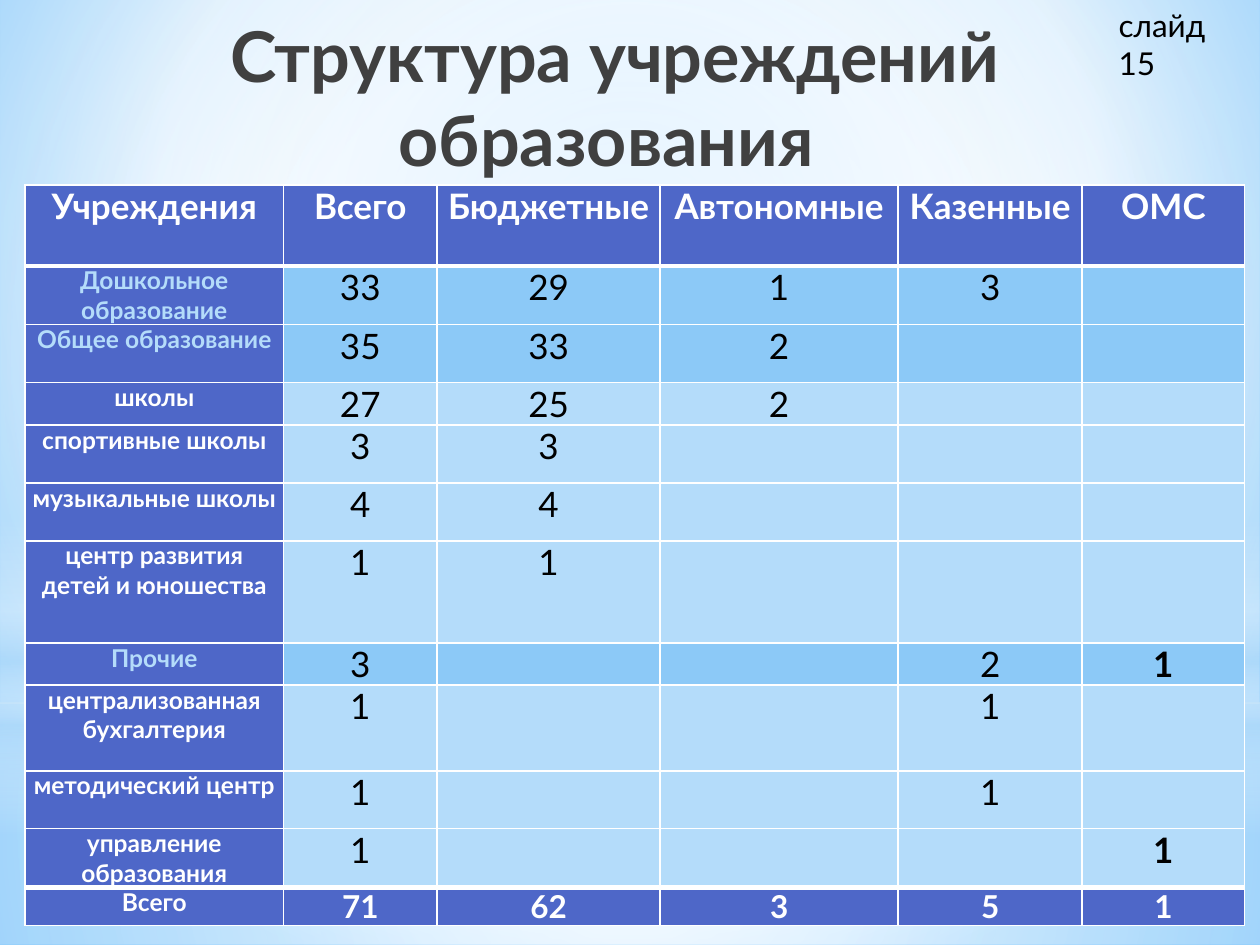
from lxml.etree import SubElement
from pptx import Presentation
from pptx.dml.color import RGBColor
from pptx.enum.shapes import MSO_SHAPE
from pptx.enum.text import MSO_ANCHOR, MSO_AUTO_SIZE, PP_ALIGN
from pptx.oxml import parse_xml
from pptx.oxml.ns import nsdecls, qn
from pptx.util import Inches, Pt

THEME = {
    "font": "Lato",
    "title": "404040",
    "text": "000000",
    "white": "FFFFFF",
    "sky": "B4DCFA",
    "group": "8CC9F7",
    "accent": "4E67C8",
    "glow_edge": "9ED5FF",
    "glow_far": "5BB9FF",
    "title_size": 40,
    "header_size": 20,
    "label_size": 14,
    "value_size": 20,
    "total_size": 18,
    "note_size": 18,
    "thin_line": 1,
    "thick_line": 3,
}
WHITE, SKY = THEME["white"], THEME["sky"]


def write_text(frame, text, size, color, bold=False, align=PP_ALIGN.LEFT):
    paragraph = frame.paragraphs[0]
    paragraph.alignment = align
    run = paragraph.add_run()
    run.text = text
    run.font.name = THEME["font"]
    run.font.size = Pt(size)
    run.font.bold = bold
    run.font.color.rgb = RGBColor.from_string(color)


def paint_gradient(fill, properties, stops, focus=None):
    """Stops are (position, color, opacity) in percent; without a focus it runs downwards."""
    fill.solid()
    gradient = parse_xml(f'<a:gradFill {nsdecls("a")} rotWithShape="1"/>')
    stop_list = SubElement(gradient, qn("a:gsLst"))
    for position, color, opacity in stops:
        stop = SubElement(stop_list, qn("a:gs"), pos=str(position * 1000))
        tint = SubElement(stop, qn("a:srgbClr"), val=color)
        if opacity < 100:
            SubElement(tint, qn("a:alpha"), val=str(opacity * 1000))
    if focus:
        circle = SubElement(gradient, qn("a:path"))
        circle.set("path", "circle")
        sides = {side: str(share * 1000) for side, share in zip("ltrb", focus)}
        SubElement(circle, qn("a:fillToRect"), **sides)
    else:
        SubElement(gradient, qn("a:lin"), ang="5400000", scaled="0")
    properties.replace(properties.find(qn("a:solidFill")), gradient)


presentation = Presentation()
presentation.slide_width = Inches(10)
presentation.slide_height = Inches(7.5)
width, height = presentation.slide_width, presentation.slide_height
slide = presentation.slides.add_slide(presentation.slide_layouts[5])

# Background glow and its soft layers
background = slide.background.fill
background.solid()
paint_gradient(
    background,
    slide.element.cSld.find(qn("p:bg")).find(qn("p:bgPr")),
    [(0, THEME["glow_edge"], 100), (60, WHITE, 100), (100, THEME["glow_far"], 100)],
    focus=(20, 10, 20, 60),
)
center = (50, 50, 50, 50)
horizon = 0.744
layers = [
    (MSO_SHAPE.RECTANGLE, horizon, 1 - horizon, center,
     [(0, WHITE, 91), (37, WHITE, 76), (100, SKY, 79)]),
    (MSO_SHAPE.RECTANGLE, 0, horizon, center,
     [(0, WHITE, 89), (48, WHITE, 62), (100, SKY, 79)]),
    (MSO_SHAPE.RECTANGLE, 0.55, 1 / 3, None,
     [(0, WHITE, 0), (29, WHITE, 30), (45, SKY, 40),
      (55, WHITE, 26), (65, SKY, 60), (100, WHITE, 0)]),
    (MSO_SHAPE.OVAL, 0.233, horizon, center,
     [(0, WHITE, 100), (56, WHITE, 0)]),
]
for kind, top, tall, focus, stops in layers:
    layer = slide.shapes.add_shape(kind, 0, int(height * top), width, int(height * tall))
    layer.shadow.inherit = False
    layer.line.fill.background()
    paint_gradient(layer.fill, layer.element.spPr, stops, focus)

# Title, lifted above the background layers
title = slide.shapes.title
layer.element.addnext(title.element)
title.left, title.top = int(width * 0.075), Inches(0.05)
title.width, title.height = int(width * 0.826), int(height / 6)
title.text_frame.word_wrap = True
title.text_frame.auto_size = MSO_AUTO_SIZE.NONE
title.text_frame.vertical_anchor = MSO_ANCHOR.TOP
write_text(title.text_frame, "Структура учреждений образования ", THEME["title_size"],
           THEME["title"], bold=True, align=PP_ALIGN.CENTER)

# Table of institutions: each row is (kind, height, texts)
columns = [2.05, 1.22, 1.77, 1.89, 1.46, 1.29]
rows = [
    ("header", 0.64, ["Учреждения", "Всего", "Бюджетные", "Автономные", "Казенные", "ОМС"]),
    ("group", 0.46, ["Дошкольное образование", "33", "29", "1", "3", ""]),
    ("group", 0.46, ["Общее образование", "35", "33", "2", "", ""]),
    ("item", 0.29, ["школы", "27", "25", "2", "", ""]),
    ("item", 0.46, ["спортивные школы", "3", "3", "", "", ""]),
    ("item", 0.46, ["музыкальные школы", "4", "4", "", "", ""]),
    ("item", 0.81, ["центр развития детей и юношества", "1", "1", "", "", ""]),
    ("group", 0.29, ["Прочие", "3", "", "", "2", "1"]),
    ("item", 0.68, ["централизованная бухгалтерия", "1", "", "", "1", ""]),
    ("item", 0.46, ["методический центр", "1", "", "", "1", ""]),
    ("item", 0.46, ["управление образования", "1", "", "", "", "1"]),
    ("total", 0.29, ["Всего", "71", "62", "3", "5", "1"]),
]
last_row, last_column = len(rows) - 1, len(columns) - 1
table = slide.shapes.add_table(
    len(rows), len(columns), Inches(0.2), Inches(1.47),
    Inches(sum(columns)), Inches(sum(tall for _, tall, _ in rows)),
).table
table.horz_banding = False
for column, wide in zip(table.columns, columns):
    column.width = Inches(wide)

for row_index, (kind, tall, texts) in enumerate(rows):
    table.rows[row_index].height = Inches(tall)
    thick_top = row_index in (1, last_row)
    thick_bottom = row_index in (0, last_row - 1)
    for column_index, text in enumerate(texts):
        cell = table.cell(row_index, column_index)
        cell.margin_left = cell.margin_right = Inches(0.05)
        cell.margin_top = cell.margin_bottom = 0
        is_label = column_index == 0
        framed = is_label or kind in ("header", "total")
        cell.fill.solid()
        cell_color = THEME["accent"] if framed else THEME["group"] if kind == "group" else SKY
        cell.fill.fore_color.rgb = RGBColor.from_string(cell_color)

        edges = [("lnL", False), ("lnR", False), ("lnT", thick_top), ("lnB", thick_bottom)]
        for order, (edge, thick) in enumerate(edges):
            line_width = Pt(THEME["thick_line"] if thick else THEME["thin_line"])
            cell._tc.get_or_add_tcPr().insert(order, parse_xml(
                f'<a:{edge} {nsdecls("a")} w="{line_width}"><a:solidFill>'
                f'<a:srgbClr val="{WHITE}"/></a:solidFill></a:{edge}>'))

        if text:
            if kind == "header":
                size = THEME["header_size"]
            elif is_label:
                size = THEME["label_size"]
            else:
                size = THEME["total_size" if kind == "total" else "value_size"]
            color = WHITE if framed else THEME["text"]
            if is_label and kind == "group":
                color = SKY
            write_text(cell.text_frame, text, size, color,
                       bold=framed or column_index == last_column, align=PP_ALIGN.CENTER)

# Slide number note in the corner
note = slide.shapes.add_textbox(int(width * 0.878), 0, int(width * 0.12), Inches(0.4))
note.text_frame.word_wrap = True
write_text(note.text_frame, "слайд 15", THEME["note_size"], THEME["text"])

presentation.save("out.pptx")
